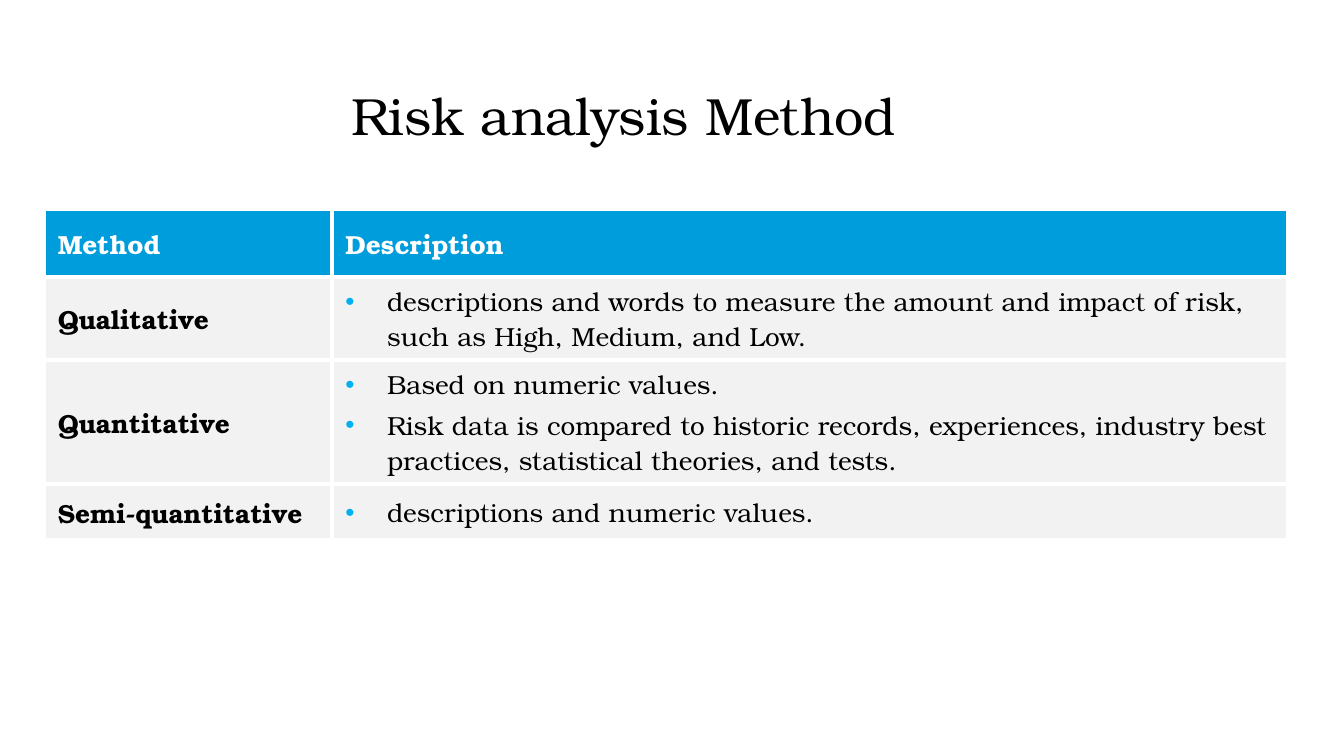
"""Build the risk analysis method slide."""
from lxml import etree
from pptx import Presentation
from pptx.dml.color import RGBColor
from pptx.enum import text
from pptx.oxml import ns
from pptx.util import Inches, Pt

TITLE = " Risk analysis Method"
HEADER = ("Method", "Description")
METHODS = [
    ("Qualitative", [
        "descriptions and words to measure the amount and impact of risk, "
        "such as High, Medium, and Low."]),
    ("Quantitative", [
        "Based on numeric values.",
        "Risk data is compared to historic records, experiences, industry "
        "best practices, statistical theories, and tests."]),
    ("Semi-quantitative", ["descriptions and numeric values."]),
]
COL_WIDTHS = (2.14, 7.11)
ROW_HEIGHTS = (0.5, 0.62, 0.92, 0.42)
FONT = "TeX Gyre Bonum"
COLORS = {"text": "000000", "white": "FFFFFF", "header": "009DDC",
          "body": "F2F2F2", "bullet": "00B0F0"}


def color(name):
    return RGBColor.from_string(COLORS[name])


def add_color(parent, name):
    etree.SubElement(parent, ns.qn("a:srgbClr"), val=COLORS[name])


def style(p, size, name, bold=False):
    for r in p.runs:
        r.font.name = FONT
        r.font.size = Pt(size)
        r.font.bold = bold
        r.font.color.rgb = color(name)


def add_bullet(p):
    pPr = p._p.get_or_add_pPr()
    pPr.set("marL", str(Inches(0.31)))
    pPr.set("indent", str(-Inches(0.31)))
    add_color(etree.SubElement(pPr, ns.qn("a:buClr")), "bullet")
    etree.SubElement(pPr, ns.qn("a:buFont"), typeface="Arial")
    etree.SubElement(pPr, ns.qn("a:buChar"), char="•")


def add_borders(cell):
    tcPr = cell._tc.get_or_add_tcPr()
    for side in ("lnL", "lnR", "lnT", "lnB"):
        ln = etree.SubElement(tcPr, ns.qn(f"a:{side}"), w=str(Pt(2.25)))
        add_color(etree.SubElement(ln, ns.qn("a:solidFill")), "white")


def fill_cell(cell, lines, fill, font_color, bold, bulleted):
    add_borders(cell)
    cell.fill.solid()
    cell.fill.fore_color.rgb = color(fill)
    cell.vertical_anchor = text.MSO_ANCHOR.MIDDLE
    tf = cell.text_frame
    tf.text = "\n".join(lines)
    for p in tf.paragraphs:
        p.space_before = Pt(2.8)
        style(p, 14, font_color, bold)
        if bulleted:
            add_bullet(p)


def add_title(s):
    sp = s.shapes.title
    sp.left, sp.top, sp.width, sp.height = map(Inches, (1.33, 0.48, 6.5, 0.75))
    tf = sp.text_frame
    tf.text = TITLE
    tf.vertical_anchor = text.MSO_ANCHOR.MIDDLE
    p = tf.paragraphs[0]
    p.alignment = text.PP_ALIGN.CENTER
    style(p, 28, "text")


def add_methods(s):
    table = s.shapes.add_table(
        len(ROW_HEIGHTS), len(COL_WIDTHS), Inches(0.33), Inches(1.56),
        Inches(sum(COL_WIDTHS)), Inches(sum(ROW_HEIGHTS))).table
    for column, width in zip(table.columns, COL_WIDTHS):
        column.width = Inches(width)
    for row, height in zip(table.rows, ROW_HEIGHTS):
        row.height = Inches(height)
    for i, label in enumerate(HEADER):
        fill_cell(table.cell(0, i), [label], "header", "white", True, False)
    for i, (method, points) in enumerate(METHODS, 1):
        fill_cell(table.cell(i, 0), [method], "body", "text", True, False)
        fill_cell(table.cell(i, 1), points, "body", "text", False, True)


def main():
    prs = Presentation()
    prs.slide_width = Inches(10)
    prs.slide_height = prs.slide_width * 9 // 16
    s = prs.slides.add_slide(prs.slide_layouts[5])
    add_title(s)
    add_methods(s)
    prs.save("out.pptx")


if __name__ == "__main__":
    main()
